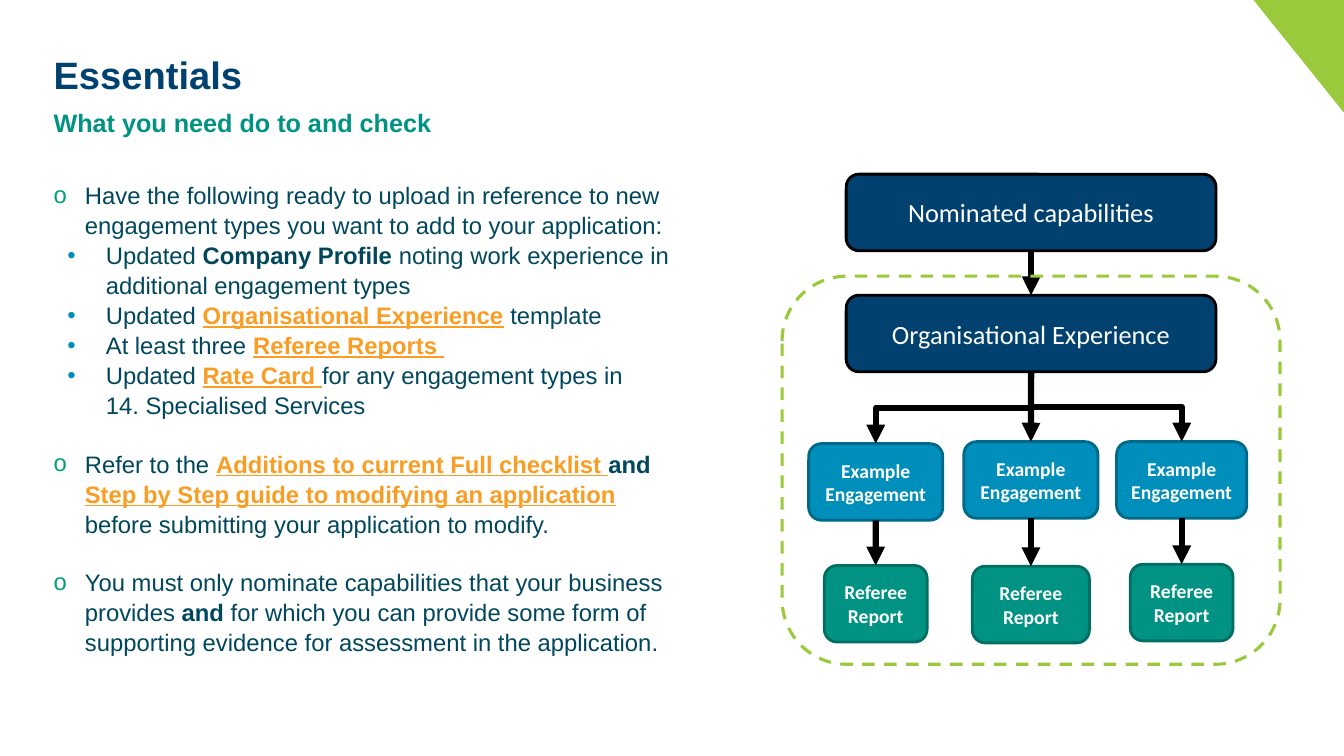
from lxml import etree
from pptx import Presentation
from pptx.dml.color import RGBColor
from pptx.enum.dml import MSO_LINE
from pptx.enum.shapes import MSO_CONNECTOR as CONNECTOR, MSO_SHAPE as SHAPE
from pptx.enum.text import MSO_ANCHOR as ANCHOR, MSO_AUTO_SIZE as AUTO_SIZE, PP_ALIGN as ALIGN
from pptx.oxml.ns import qn
from pptx.util import Cm, Pt

NAVY = RGBColor(0x00, 0x42, 0x6F)
BOX_NAVY = RGBColor(0x00, 0x41, 0x6F)
INK = RGBColor(0x00, 0x47, 0x5D)
TEAL = RGBColor(0x00, 0x93, 0x83)
DARK_TEAL = RGBColor(0x00, 0x6E, 0x62)
BULLET_GREEN = RGBColor(0x00, 0x9F, 0x7A)
BLUE = RGBColor(0x00, 0x8E, 0xBA)
DARK_BLUE = RGBColor(0x00, 0x69, 0x8A)
ORANGE = RGBColor(0xF9, 0x9D, 0x24)
LIME = RGBColor(0x9A, 0xCA, 0x3C)
BLACK = RGBColor(0x00, 0x00, 0x00)
WHITE = RGBColor(0xFF, 0xFF, 0xFF)

WIDTH, HEIGHT = 33.87, 19.05
BOTTOM, TOP = 2, 0  # connection sites
BOX_HEIGHT = 1.93

# (level, space before in points, [(text, style)])
CHECKLIST = [
    (0, 0, [("Have the following ready to upload in reference to new engagement types "
             "you want to add to your application:", "")]),
    (1, 0, [("Updated ", ""), ("Company Profile ", "bold"),
            ("noting work experience in additional engagement types", "")]),
    (1, 0, [("Updated ", ""), ("Organisational Experience", "link"), (" template", "")]),
    (1, 0, [("At least three ", ""), ("Referee Reports ", "link")]),
    (1, 0, [("Updated ", ""), ("Rate Card ", "link"),
            ("for any engagement types in \v14. Specialised Services", "")]),
    (0, 20.5, [("Refer to the ", ""), ("Additions to current Full checklist ", "link"),
               ("and ", "bold"), ("Step by Step guide to modifying an application ", "link"),
               ("before submitting your application to modify.", "")]),
    (0, 20.5, [("You must only nominate capabilities that your business provides ", ""),
               ("and ", "bold"),
               ("for which you can provide some form of supporting evidence for assessment "
                "in the application.", "")]),
]
# level: (bullet, colour, left margin, hanging indent)
BULLETS = {0: ("o", BULLET_GREEN, 0.79, 0.79), 1: ("•", BLUE, 1.32, 0.97)}

# (centre, engagement top, engagement width, report top, report width)
BRANCHES = [(2.36, 6.79, 3.38, 9.86, 2.59),
            (6.27, 6.74, 3.38, 9.88, 2.95),
            (10.07, 6.74, 3.28, 9.83, 2.59)]


def set_font(font, name, size, color, bold=False):
    font.name, font.size, font.bold = name, Pt(size), bold
    font.color.rgb = color


def add_corner(slide, left, top, width, height):
    builder = slide.shapes.build_freeform(Cm(left), Cm(top))
    builder.add_line_segments([(Cm(left + width), Cm(top)),
                               (Cm(left + width), Cm(top + height))])
    corner = builder.convert_to_shape()
    corner.shadow.inherit = False
    corner.fill.solid()
    corner.fill.fore_color.rgb = LIME
    corner.line.fill.background()


def fill_heading(shape, text, size, color, left, top, width, height):
    shape.left, shape.top, shape.width, shape.height = map(Cm, (left, top, width, height))
    frame = shape.text_frame
    frame.word_wrap, frame.auto_size = True, AUTO_SIZE.NONE
    frame.vertical_anchor = ANCHOR.TOP
    frame.margin_left = frame.margin_right = frame.margin_top = frame.margin_bottom = 0
    paragraph = frame.paragraphs[0]
    paragraph.text, paragraph.alignment, paragraph.line_spacing = text, ALIGN.LEFT, 1.1
    set_font(paragraph.font, "Arial", size, color, True)


def set_bullet(paragraph, level):
    character, color, margin, hanging = BULLETS[level]
    properties = paragraph._p.get_or_add_pPr()
    properties.set("marL", str(Cm(margin)))
    properties.set("indent", str(-Cm(hanging)))
    bullet_color = etree.SubElement(properties, qn("a:buClr"))
    etree.SubElement(bullet_color, qn("a:srgbClr"), val=str(color))
    etree.SubElement(properties, qn("a:buFont"), typeface="Arial")
    etree.SubElement(properties, qn("a:buChar"), char=character)


def add_checklist(slide, left, top, width, height):
    frame = slide.shapes.add_textbox(*map(Cm, (left, top, width, height))).text_frame
    frame.word_wrap, frame.margin_left = True, 0
    for index, (level, space, runs) in enumerate(CHECKLIST):
        paragraph = frame.add_paragraph() if index else frame.paragraphs[0]
        paragraph.level, paragraph.line_spacing = level, 1.05
        paragraph.space_before = Pt(space)
        set_bullet(paragraph, level)
        set_font(paragraph.font, "Arial", 17, INK)
        for text, style in runs:
            # A line break inside a run's text becomes a real break
            for part_index, part in enumerate(text.split("\v")):
                if part_index:
                    paragraph.add_line_break()
                run = paragraph.add_run()
                run.text = part
                is_link = style == "link"
                set_font(run.font, "Arial", 17, ORANGE if is_link else INK, style != "")
                run.font.underline = is_link


def add_box(slide, text, fill, border, size, bold, center, top, width):
    box = slide.shapes.add_shape(SHAPE.ROUNDED_RECTANGLE, Cm(center - width / 2), Cm(top),
                                 Cm(width), Cm(BOX_HEIGHT))
    box.shadow.inherit = False
    box.fill.solid()
    box.fill.fore_color.rgb = fill
    box.line.color.rgb, box.line.width = border, Pt(2)
    frame = box.text_frame
    frame.word_wrap, frame.vertical_anchor = True, ANCHOR.MIDDLE
    paragraph = frame.paragraphs[0]
    paragraph.text, paragraph.alignment = text, ALIGN.CENTER
    set_font(paragraph.font, "Calibri", size, WHITE, bold)
    return box


def style_arrow(connector):
    connector.line.color.rgb, connector.line.width = BLACK, Pt(4.5)
    etree.SubElement(connector.line._get_or_add_ln(), qn("a:tailEnd"), type="triangle")
    etree.SubElement(connector._element.spPr, qn("a:effectLst"))


def add_straight_arrow(slide, upper, lower):
    connector = slide.shapes.add_connector(CONNECTOR.STRAIGHT, 0, 0, 0, 0)
    connector.begin_connect(upper, BOTTOM)
    connector.end_connect(lower, TOP)
    style_arrow(connector)


def add_elbow_arrow(slide, upper, lower):
    """Leave the upper box downwards: an elbow turned by a quarter about its centre."""
    start_x, start_y = upper.left + upper.width // 2, upper.top + upper.height
    end_x, end_y = lower.left + lower.width // 2, lower.top
    center_x, center_y = (start_x + end_x) // 2, (start_y + end_y) // 2
    half_drop, half_span = (end_y - start_y) // 2, abs(end_x - start_x) // 2
    connector = slide.shapes.add_connector(
        CONNECTOR.ELBOW, center_x - half_drop, center_y - half_span,
        center_x + half_drop, center_y + half_span)
    transform = connector._element.spPr.find(qn("a:xfrm"))
    goes_right = end_x > start_x
    transform.set("rot", str((270 if goes_right else 90) * 60000))
    if goes_right:
        transform.set("flipH", "1")
    style_arrow(connector)


def add_diagram(slide, left, top, width, height):
    center = left + width / 2
    # Main boxes
    nominated, experience = [
        add_box(slide, text, BOX_NAVY, BLACK, 18.8, False, center, top + offset, 9.32)
        for text, offset in (("Nominated capabilities", 0), ("Organisational Experience", 3.05))]
    add_straight_arrow(slide, nominated, experience)

    # Dashed frame
    frame_offset = 2.57
    frame = slide.shapes.add_shape(SHAPE.ROUNDED_RECTANGLE, Cm(left), Cm(top + frame_offset),
                                   Cm(width), Cm(height - frame_offset))
    frame.shadow.inherit = False
    frame.fill.background()
    frame.line.color.rgb, frame.line.width = LIME, Pt(2.25)
    frame.line.dash_style = MSO_LINE.DASH

    # Branches
    for offset, engagement_top, engagement_width, report_top, report_width in BRANCHES:
        engagement = add_box(slide, "Example\vEngagement", BLUE, DARK_BLUE, 14, True,
                             left + offset, top + engagement_top, engagement_width)
        report = add_box(slide, "Referee Report", TEAL, DARK_TEAL, 14, True,
                         left + offset, top + report_top, report_width)
        is_middle = abs(left + offset - center) < 0.1
        (add_straight_arrow if is_middle else add_elbow_arrow)(slide, experience, engagement)
        add_straight_arrow(slide, engagement, report)


def main():
    presentation = Presentation()
    presentation.slide_width, presentation.slide_height = Cm(WIDTH), Cm(HEIGHT)
    slide = presentation.slides.add_slide(presentation.slide_layouts[5])
    add_corner(slide, WIDTH - 2.28, 0, 2.28, 2.84)
    fill_heading(slide.shapes.title, "Essentials", 27.2, NAVY, 1.35, 1.19, 20.78, 1.4)
    fill_heading(slide.shapes.add_textbox(0, 0, 0, 0), "What you need do to and check",
                 18, TEAL, 1.35, 2.62, 30.12, 0.76)
    add_checklist(slide, 1.35, 4.39, 16.1, 13.46)
    add_diagram(slide, 19.71, 4.39, 12.55, 12.35)
    presentation.save("out.pptx")


if __name__ == "__main__":
    main()
